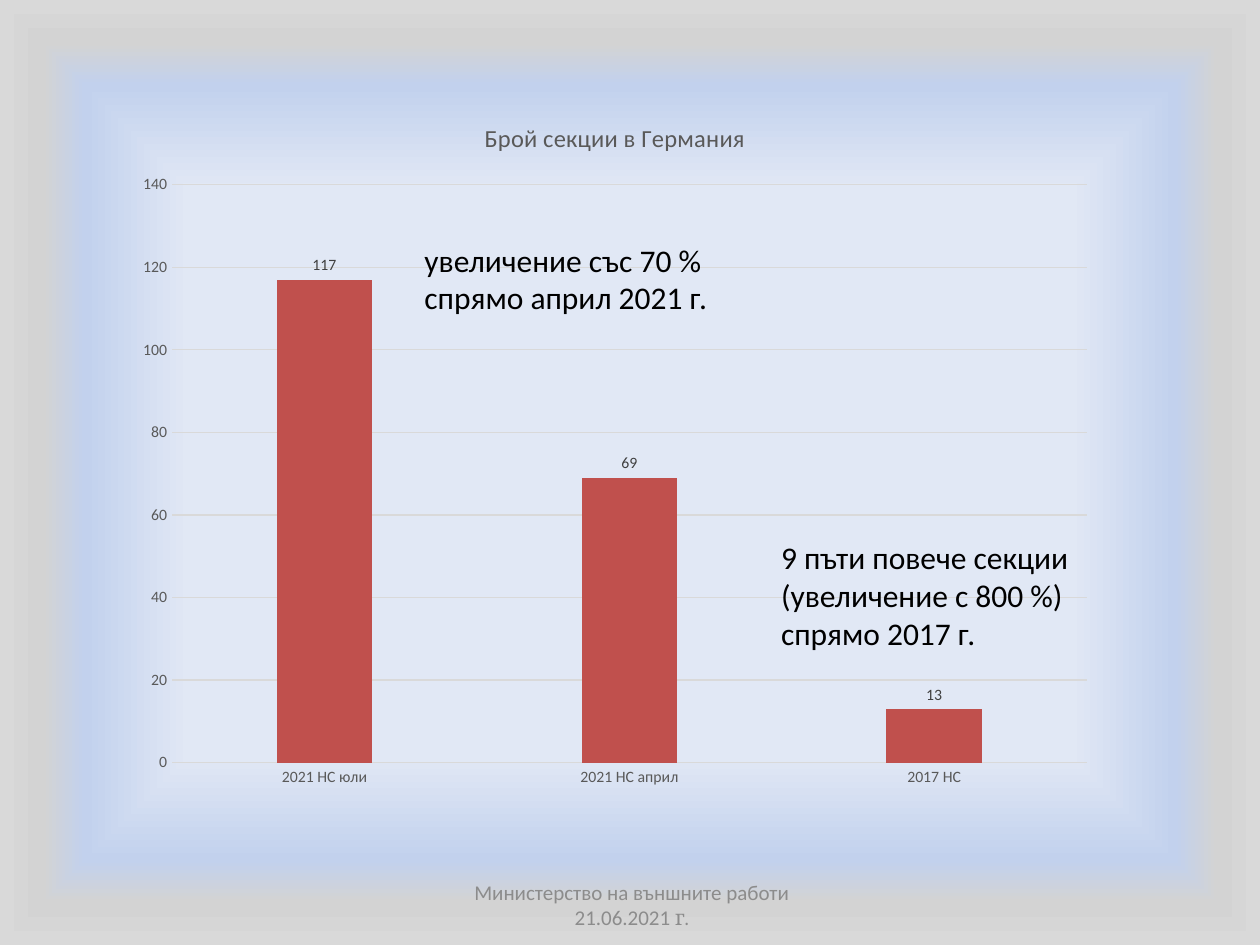
from typing import NamedTuple

from pptx import Presentation
from pptx.chart.data import CategoryChartData as ChartData
from pptx.dml.color import RGBColor as RGB
from pptx.enum.chart import XL_CHART_TYPE as Kind
from pptx.enum.chart import XL_LABEL_POSITION as Spot
from pptx.enum.chart import XL_TICK_MARK as Tick
from pptx.enum.text import MSO_ANCHOR as Anchor
from pptx.enum.text import PP_ALIGN as Align
from pptx.oxml import parse_xml
from pptx.oxml.ns import nsdecls, qn
from pptx.util import Inches, Pt

COLORS = {
    "text": "000000",
    "foot": "8C8C8C",
    "axis": "595959",
    "label": "404040",
    "grid": "D9D9D9",
    "bar": "C0504D",
}
# Background stops from the centre out: percent, colour
STOPS = [(60, "E1E8F5"), (82, "C2D1ED"), (91, "D3D3D3"), (100, "D9D9D9")]
TITLE = "Брой секции в Германия"
COUNTS = {"2021 НС юли": 117, "2021 НС април": 69, "2017 НС": 13}


class Box(NamedTuple):
    left: float
    top: float
    width: float
    height: float


class Note(NamedTuple):
    box: Box
    text: str


NOTES = [
    Note(Box(3.27, 1.86, 2.52, 0.71), "увеличение със 70 % спрямо април 2021 г."),
    Note(Box(6.1, 4.22, 2.52, 1.01),
         "9 пъти повече секции (увеличение с 800 %) спрямо 2017 г."),
]


def style(font, size: float, color: str, face: str = "Calibri") -> None:
    font.size = Pt(size)
    font.name = face
    font.bold = False
    font.color.rgb = RGB.from_string(COLORS[color])


def rule(line) -> None:
    line.color.rgb = RGB.from_string(COLORS["grid"])
    line.width = Pt(0.75)


def add_text(slide, box: Box):
    frame = slide.shapes.add_textbox(*map(Inches, box)).text_frame
    frame.word_wrap = True
    return frame


def add_note(slide, note: Note) -> None:
    frame = add_text(slide, note.box)
    frame.text = note.text
    style(frame.paragraphs[0].runs[0].font, 18, "text")


def add_foot(slide) -> None:
    frame = add_text(slide, Box(3.43, 6.98, 3.17, 0.4))
    frame.vertical_anchor = Anchor.MIDDLE
    para = frame.paragraphs[0]
    para.alignment = Align.CENTER
    for text, face in [
        ("Министерство на външните работи 21.06.2021", "Calibri"),
        (" г.", "Cambria"),
    ]:
        run = para.add_run()
        run.text = text
        style(run.font, 12, "foot", face)


def set_back(slide) -> None:
    slide.background.fill.gradient()
    old = next(slide.element.iter(qn("a:gradFill")))
    stops = "".join(
        f'<a:gs pos="{pos * 1000}"><a:srgbClr val="{color}"/></a:gs>'
        for pos, color in STOPS
    )
    new = parse_xml(
        f'<a:gradFill {nsdecls("a")} rotWithShape="1"><a:gsLst>{stops}</a:gsLst>'
        '<a:path path="shape"><a:fillToRect l="50000" t="50000" r="50000" b="50000"/>'
        "</a:path></a:gradFill>"
    )
    old.getparent().replace(old, new)


def add_bars(slide) -> None:
    data = ChartData()
    data.categories = list(COUNTS)
    data.add_series(TITLE, list(COUNTS.values()))
    area = map(Inches, Box(0.98, 0.76, 7.8, 5.59))
    chart = slide.shapes.add_chart(Kind.COLUMN_CLUSTERED, *area, data).chart
    style(chart.font, 10, "text")
    chart.has_legend = False
    chart.has_title = True
    head = chart.chart_title.text_frame
    head.text = TITLE
    style(head.paragraphs[0].runs[0].font, 14, "axis")

    # Axes
    for axis in (chart.category_axis, chart.value_axis):
        axis.major_tick_mark = axis.minor_tick_mark = Tick.NONE
        style(axis.tick_labels.font, 9, "axis")
    rule(chart.category_axis.format.line)
    worth = chart.value_axis
    worth.minimum_scale, worth.maximum_scale, worth.major_unit = 0, 140, 20
    worth.format.line.fill.background()
    rule(worth.major_gridlines.format.line)

    # Columns and their labels
    plot = chart.plots[0]
    plot.gap_width, plot.overlap = 219, -27
    plot.vary_by_categories = False
    bars = plot.series[0]
    bars.format.fill.solid()
    bars.format.fill.fore_color.rgb = RGB.from_string(COLORS["bar"])
    tags = bars.data_labels
    tags.show_value = True
    tags.position = Spot.OUTSIDE_END
    style(tags.font, 9, "label")


def main() -> None:
    deck = Presentation()
    deck.slide_width, deck.slide_height = Inches(10), Inches(7.5)
    slide = deck.slides.add_slide(deck.slide_layouts[6])
    set_back(slide)
    add_foot(slide)
    add_bars(slide)
    for note in NOTES:
        add_note(slide, note)
    deck.save("out.pptx")


if __name__ == "__main__":
    main()
